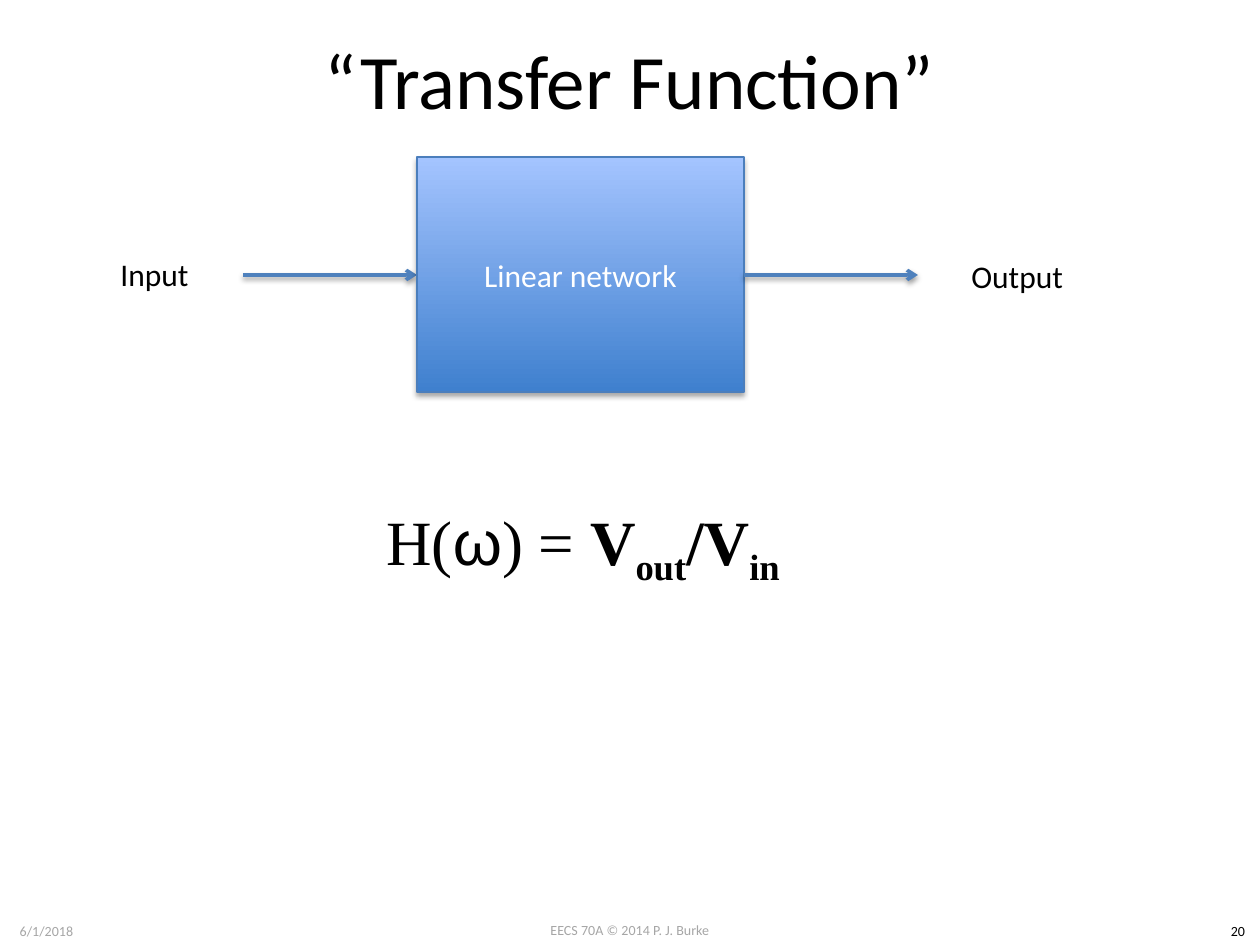
from lxml.etree import SubElement
from pptx import Presentation
from pptx.dml.color import RGBColor
from pptx.enum.shapes import MSO_CONNECTOR as Connector, MSO_SHAPE as Shape
from pptx.enum.text import MSO_ANCHOR as Anchor, MSO_AUTO_SIZE as AutoSize, PP_ALIGN as Align
from pptx.oxml.ns import qn
from pptx.util import Emu, Pt


def px(length):
    return Emu(round(length * 914400 / 126))


def color(code):
    return RGBColor.from_string(code)


def write(para, text, size=18, font="Calibri", fill="000000", bold=False, base=0):
    span = para.add_run()
    span.text = text
    span.font.size = Pt(size)
    span.font.name = font
    span.font.bold = bold
    span.font.color.rgb = color(fill)
    if base:
        span.font._element.set("baseline", str(base * 1000))


class Slide:
    ACCENT = "4F81BD"
    EDGE = "4B7EBC"
    GRADIENT = ("3F80CE", "A4C4FF")
    MUTED = "A6A6A6"
    SERIF = "Times New Roman"

    def __init__(self, deck):
        self.page = deck.slides.add_slide(deck.slide_layouts[5])

    def shadow(self, item, opacity, distance):
        effects = SubElement(item._element.spPr, qn("a:effectLst"))
        outer = SubElement(effects, qn("a:outerShdw"), blurRad=str(Pt(3.1)),
                           dist=str(Pt(distance)), dir="5400000", rotWithShape="0")
        tint = SubElement(outer, qn("a:srgbClr"), val="000000")
        SubElement(tint, qn("a:alpha"), val=str(opacity * 1000))

    def title(self, text, left, top, width, height):
        box = self.page.shapes.title
        box.left, box.top, box.width, box.height = map(px, (left, top, width, height))
        box.text_frame.vertical_anchor = Anchor.MIDDLE
        para = box.text_frame.paragraphs[0]
        para.alignment = Align.CENTER
        write(para, text, size=44)

    def text(self, spans, left, top, width, height, align=Align.LEFT, wrap=True):
        box = self.page.shapes.add_textbox(*map(px, (left, top, width, height)))
        box.text_frame.word_wrap = wrap
        box.text_frame.auto_size = AutoSize.SHAPE_TO_FIT_TEXT
        para = box.text_frame.paragraphs[0]
        para.alignment = align
        for words, style in spans:
            write(para, words, **style)

    def block(self, text, left, top, width, height):
        box = self.page.shapes.add_shape(Shape.RECTANGLE, *map(px, (left, top, width, height)))
        box.fill.gradient()
        box.fill.gradient_angle = 90
        for stop, code in zip(box.fill.gradient_stops, self.GRADIENT):
            stop.color.rgb = color(code)
        box.line.color.rgb = color(self.EDGE)
        box.line.width = Pt(0.75)
        self.shadow(box, 35, 1.8)
        box.text_frame.vertical_anchor = Anchor.MIDDLE
        para = box.text_frame.paragraphs[0]
        para.alignment = Align.CENTER
        write(para, text, fill="FFFFFF")

    def arrow(self, left, right, level):
        line = self.page.shapes.add_connector(
            Connector.STRAIGHT, *map(px, (left, level, right, level)))
        line.line.color.rgb = color(self.ACCENT)
        line.line.width = Pt(2)
        SubElement(line.line._get_or_add_ln(), qn("a:tailEnd"), type="arrow")
        self.shadow(line, 38, 1.6)


def main():
    deck = Presentation()
    deck.slide_width, deck.slide_height = px(1260), px(945)
    slide = Slide(deck)

    muted = dict(size=8, fill=Slide.MUTED)
    for words, style, left, top, width in (
        ("EECS 70A © 2014 P. J. Burke", muted, 483, 915, 294),
        ("6/1/2018", muted, 0, 916, 93),
        ("20", dict(size=8), 1216, 916, 44),
    ):
        slide.text([(words, style)], left, top, width, 30, align=Align.CENTER)

    slide.title("“Transfer Function”", 63, 0, 1134, 158)

    block_left, block_width, reach, level = 417, 327, 174, 275
    block_right = block_left + block_width
    slide.arrow(block_left - reach, block_left, level)
    slide.block("Linear network", block_left, 157, block_width, 235)
    slide.arrow(block_right, block_right + reach, level)
    slide.text([("Input", {})], 108, 249, 95, 51, wrap=False)
    slide.text([("Output", {})], 959, 251, 118, 51, wrap=False)

    plain = dict(size=36, font=Slide.SERIF)
    bold = dict(plain, bold=True)
    lowered = dict(bold, base=-25)
    slide.text([
        ("H(", plain), ("ω", dict(plain, font="Arial")), (") = ", plain),
        ("V", bold), ("out", lowered), ("/V", bold), ("in", lowered),
    ], 374, 496, 543, 89)

    deck.save("out.pptx")


if __name__ == "__main__":
    main()
